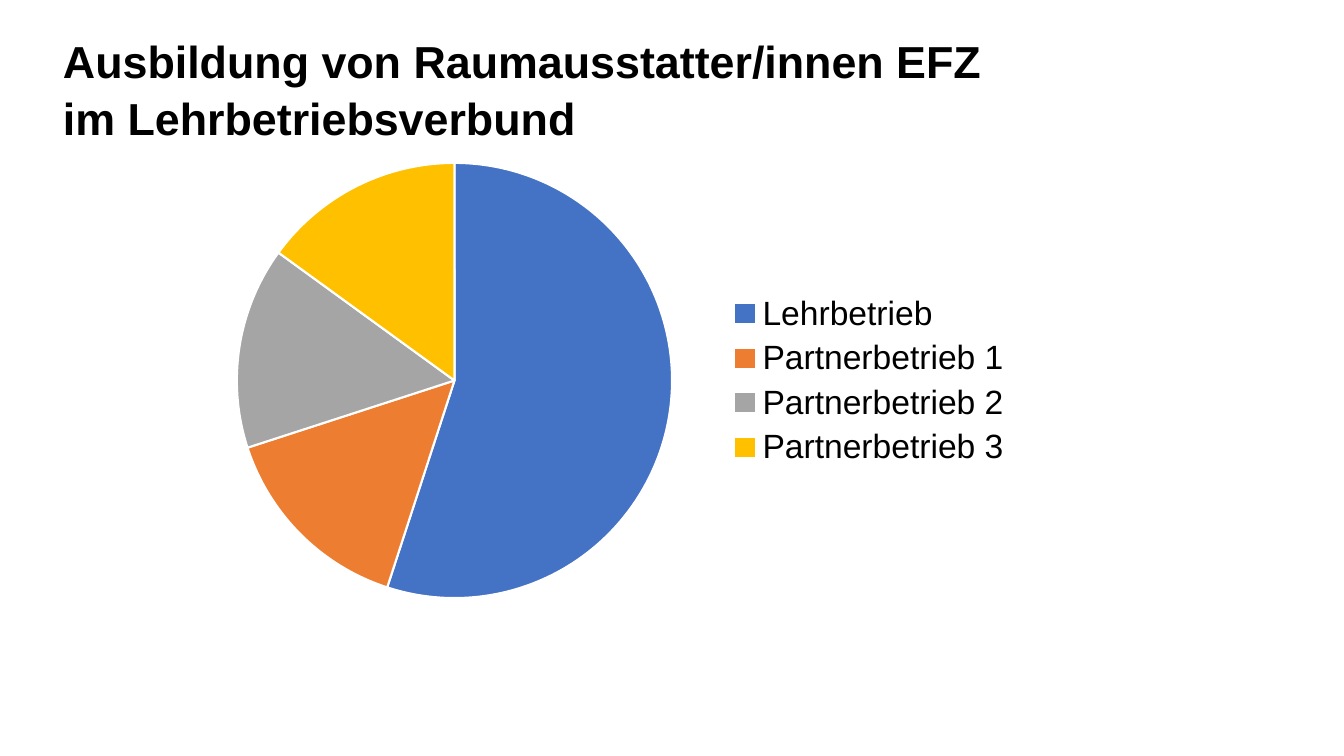
import pptx
import pptx.chart.data
import pptx.dml.color
import pptx.enum.chart
import pptx.enum.text
import pptx.util

PX = 914400 / 100.8
HUES = {"text": "000000", "edge": "FFFFFF", "Lehrbetrieb": "4472C4",
        "Partnerbetrieb 1": "ED7D31", "Partnerbetrieb 2": "A5A5A5",
        "Partnerbetrieb 3": "FFC000"}
SHARES = {"Lehrbetrieb": 55, "Partnerbetrieb 1": 15,
          "Partnerbetrieb 2": 15, "Partnerbetrieb 3": 15}


def scale(*sizes):
    """Turn px lengths into EMU."""
    return [pptx.util.Emu(round(size * PX)) for size in sizes]


def tint(name):
    """Return the named colour."""
    return pptx.dml.color.RGBColor.from_string(HUES[name])


def style(font, size, bold=False):
    """Set the face, size and colour of a font."""
    font.name = "Arial"
    font.size = pptx.util.Pt(size)
    font.bold = bold
    font.color.rgb = tint("text")


def add_title(slide, box):
    """Place the two-line title in the box."""
    frame = slide.shapes.add_textbox(*scale(*box)).text_frame
    frame.word_wrap = True
    frame.auto_size = pptx.enum.text.MSO_AUTO_SIZE.SHAPE_TO_FIT_TEXT
    line = frame.paragraphs[0]
    line.text = "Ausbildung von Raumausstatter/innen EFZ\nim Lehrbetriebsverbund"
    line.line_spacing = 1.06
    for run in line.runs:
        style(run.font, 32, True)


def add_pie(slide, box):
    """Place the pie of shares with its legend in the box."""
    data = pptx.chart.data.CategoryChartData()
    data.categories = list(SHARES)
    data.add_series("Series 1", list(SHARES.values()))
    kind = pptx.enum.chart.XL_CHART_TYPE.PIE
    chart = slide.shapes.add_chart(kind, *scale(*box), data).chart
    chart.has_title = False
    style(chart.font, 10)
    chart.has_legend = True
    chart.legend.position = pptx.enum.chart.XL_LEGEND_POSITION.RIGHT
    chart.legend.include_in_layout = False
    style(chart.legend.font, 24)
    plot = chart.plots[0]
    plot.vary_by_categories = True
    for index, name in enumerate(SHARES):
        form = plot.series[0].points[index].format
        form.fill.solid()
        form.fill.fore_color.rgb = tint(name)
        form.line.color.rgb = tint("edge")
        form.line.width = pptx.util.Pt(1.5)


def main():
    """Build the slide and save it."""
    deck = pptx.Presentation()
    deck.slide_width, deck.slide_height = scale(1344, 756)
    slide = deck.slides.add_slide(deck.slide_layouts[6])
    add_pie(slide, (185, 149, 838, 463))
    add_title(slide, (53, 26, 1159, 119))
    deck.save("out.pptx")


if __name__ == "__main__":
    main()
